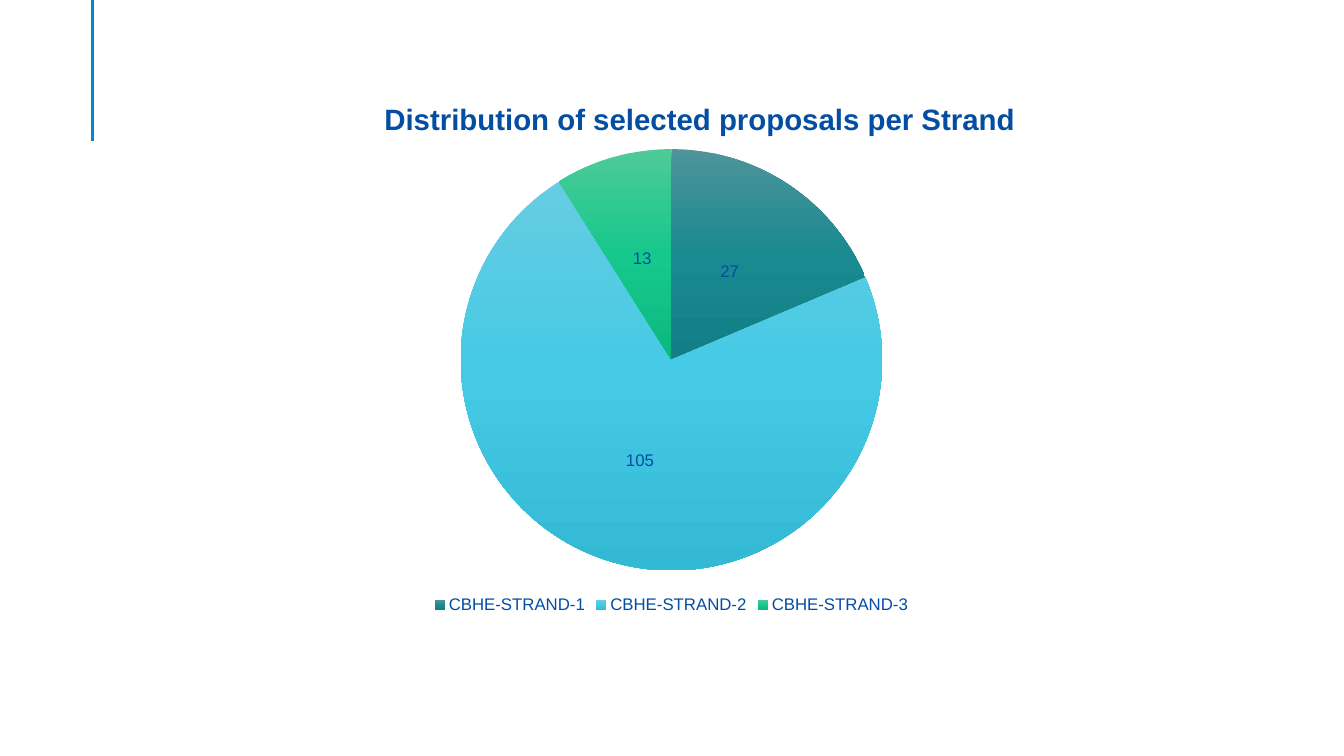
from copy import deepcopy

from lxml.etree import SubElement
from pptx import Presentation
from pptx.chart.data import CategoryChartData
from pptx.dml.color import RGBColor
from pptx.enum.chart import XL_CHART_TYPE as ChartType
from pptx.enum.chart import XL_LABEL_POSITION as LabelPosition
from pptx.enum.chart import XL_LEGEND_POSITION as LegendPosition
from pptx.enum.shapes import MSO_CONNECTOR as Connector
from pptx.oxml.ns import qn
from pptx.oxml.xmlchemy import OxmlElement
from pptx.util import Inches, Pt

TITLE = "Distribution of selected proposals per Strand"
NAVY = RGBColor(0x03, 0x4E, 0xA2)
BLUE = RGBColor(0x00, 0x88, 0xCE)
GREY = RGBColor(0x4D, 0x4D, 0x4D)

# strand, selected proposals, gradient colours from top to bottom
STRANDS = [
    ("CBHE-STRAND-1", 27, ("4E9499", "198A90", "117F85")),
    ("CBHE-STRAND-2", 105, ("66CCE3", "44CAE5", "34B9D4")),
    ("CBHE-STRAND-3", 13, ("4ECA98", "16C88D", "0CB97F")),
]

CHART_BOX = (2.3, 0.76, 8.72, 5.37)
PIE_BOX = (4.57, 1.48, 4.18, 4.18)
TITLE_CORNER = (3.76, 0.95)

BODY_FONT = {"name": "Arial", "size": Pt(10)}
LABEL_FONT = {"name": "Arial", "size": Pt(12)}
TITLE_FONT = {"name": "Arial", "size": Pt(21), "bold": True}


def style(font, values, color):
    for name, value in values.items():
        setattr(font, name, value)
    font.color.rgb = color


def place(parent, index, box, inner=False):
    """Fix a chart part at a slide position, as fractions of the chart box."""
    for old in parent.findall(qn("c:layout")):
        parent.remove(old)
    layout = OxmlElement("c:layout")
    parent.insert(index, layout)
    manual = SubElement(layout, qn("c:manualLayout"))
    left, top, width, height = CHART_BOX
    values = [("xMode", "edge"), ("yMode", "edge")]
    if inner:
        values.insert(0, ("layoutTarget", "inner"))
    offsets = (left, top, 0, 0)
    spans = (width, height, width, height)
    for name, value, offset, span in zip("xywh", box, offsets, spans):
        values.append((name, f"{(value - offset) / span:.4f}"))
    for name, value in values:
        SubElement(manual, qn(f"c:{name}")).set("val", value)


def fill_gradient(fill, colors, stop_list):
    """Spread the colours evenly from top to bottom."""
    while len(stop_list) < len(colors):
        stop_list.append(deepcopy(stop_list[0]))
    fill.gradient_angle = 270
    for index, (stop, color) in enumerate(zip(fill.gradient_stops, colors)):
        stop.position = index / (len(colors) - 1)
        stop.color.rgb = RGBColor.from_string(color)


def add_accent_line(page):
    line = page.shapes.add_connector(
        Connector.STRAIGHT, Inches(0.92), 0, Inches(0.92), Inches(1.4))
    line.line.color.rgb = BLUE
    line.line.width = Pt(2.25)
    SubElement(line._element.spPr, qn("a:effectLst"))


def add_strand_pie(page):
    data = CategoryChartData()
    data.categories = [name for name, _, _ in STRANDS]
    data.add_series("Series 1", [count for _, count, _ in STRANDS])
    chart = page.shapes.add_chart(
        ChartType.PIE, *map(Inches, CHART_BOX), data).chart
    style(chart.font, BODY_FONT, GREY)

    chart.has_title = True
    para = chart.chart_title.text_frame.paragraphs[0]
    span = para.add_run()
    span.text = TITLE
    style(span.font, TITLE_FONT, NAVY)

    chart.has_legend = True
    chart.legend.position = LegendPosition.BOTTOM
    chart.legend.include_in_layout = False
    style(chart.legend.font, LABEL_FONT, NAVY)

    plot = chart.plots[0]
    plot.vary_by_categories = True
    plot.has_data_labels = True
    labels = plot.data_labels
    labels.show_value = True
    labels.show_percentage = False
    labels.position = LabelPosition.CENTER
    style(labels.font, LABEL_FONT, NAVY)

    space = chart._chartSpace
    for index, (_, _, colors) in enumerate(STRANDS):
        point = plot.series[0].points[index]
        point.format.line.fill.background()
        point.format.fill.gradient()
        stop_list = list(space.iter(qn("a:gsLst")))[index]
        fill_gradient(point.format.fill, colors, stop_list)

    place(next(space.iter(qn("c:title"))), 1, TITLE_CORNER)
    place(next(space.iter(qn("c:plotArea"))), 0, PIE_BOX, inner=True)


def main():
    deck = Presentation()
    deck.slide_width, deck.slide_height = Inches(13.33), Inches(7.5)
    page = deck.slides.add_slide(deck.slide_layouts[6])
    add_accent_line(page)
    add_strand_pie(page)
    deck.save("out.pptx")


if __name__ == "__main__":
    main()
